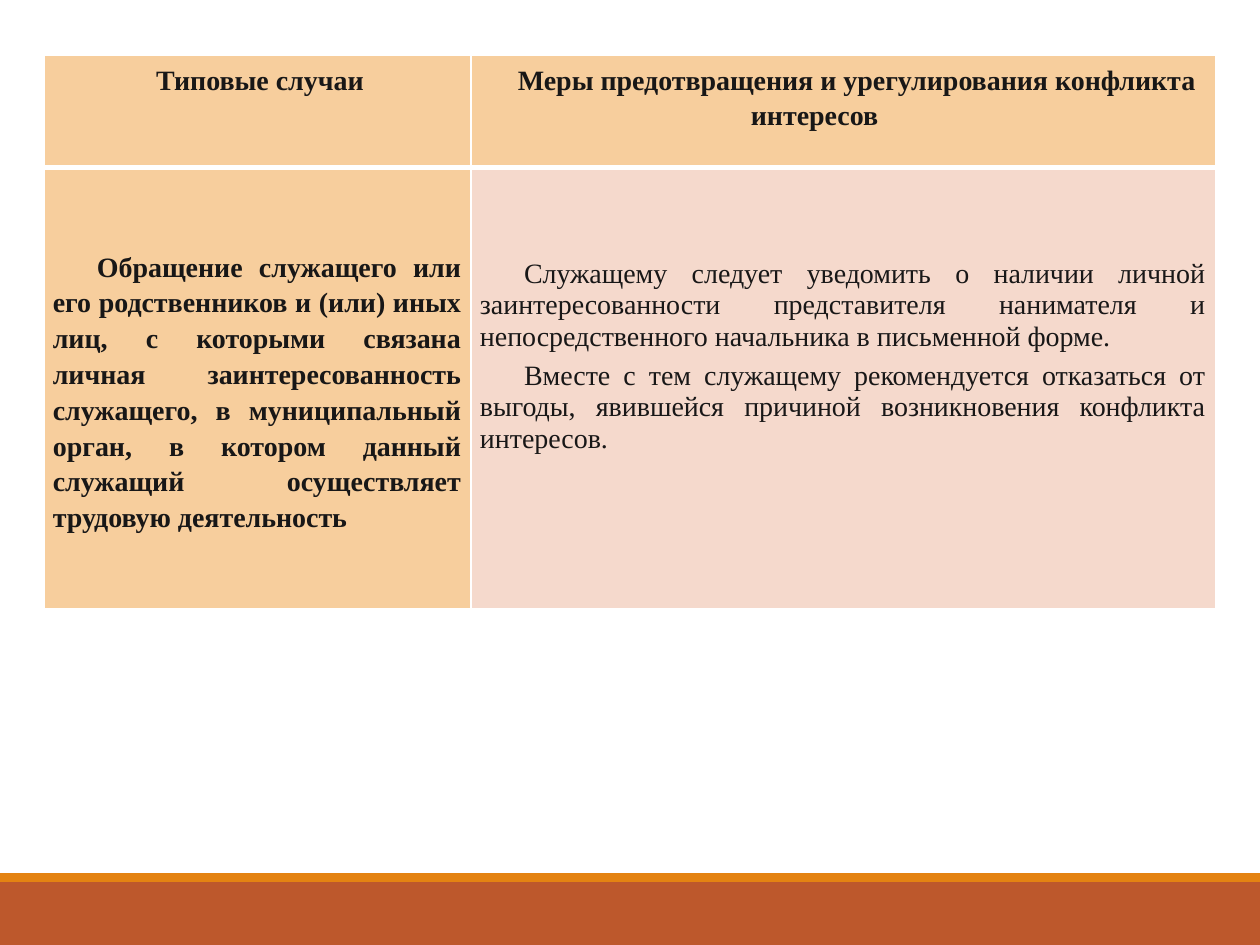
"""Slide with a table of typical conflict-of-interest cases and measures."""
from lxml.etree import SubElement
from pptx import Presentation
from pptx.dml.color import RGBColor
from pptx.enum.shapes import MSO_SHAPE as Shape
from pptx.enum.text import MSO_ANCHOR as Anchor, PP_ALIGN as Align
from pptx.oxml.ns import qn
from pptx.util import Inches, Pt

WHITE = RGBColor(0xFF, 0xFF, 0xFF)
INK = RGBColor(0x18, 0x17, 0x17)
SAND = RGBColor(0xF7, 0xCE, 0x9D)
ROSE = RGBColor(0xF5, 0xD9, 0xCC)
RUST = RGBColor(0xBD, 0x58, 0x2C)
ORANGE = RGBColor(0xE4, 0x83, 0x12)


def set_borders(cell, widths):
    properties = cell._tc.get_or_add_tcPr()
    for position, (side, width) in enumerate(zip("LRTB", widths)):
        border = SubElement(properties, qn(f"a:ln{side}"), w=str(Pt(width)))
        fill = SubElement(border, qn("a:solidFill"))
        SubElement(fill, qn("a:srgbClr"), val=str(WHITE))
        properties.insert(position, border)


deck = Presentation()
deck.slide_width, deck.slide_height = Inches(10), Inches(7.5)
slide = deck.slides.add_slide(deck.slide_layouts[6])

for top, height, color in [(7, 0.5, RUST), (6.93, 0.07, ORANGE)]:
    band = slide.shapes.add_shape(
        Shape.RECTANGLE, 0, Inches(top), deck.slide_width, Inches(height))
    band.shadow.inherit = False
    band.fill.solid()
    band.fill.fore_color.rgb = color
    band.line.fill.background()

measures = slide.shapes.add_table(
    2, 2, Inches(0.35), Inches(0.44), Inches(9.3), Inches(4.39)).table
for column, width in zip(measures.columns, (3.39, 5.91)):
    column.width = Inches(width)
for row, height in zip(measures.rows, (0.89, 3.5)):
    row.height = Inches(height)

HEADING = dict(fill=SAND, bold=True, align=Align.CENTER, left=0.04, indent=0.18,
               spacing=1.15, after=0, anchor=Anchor.TOP, inset=0.04,
               borders=(1, 1, 1, 3))
CASE = HEADING | dict(align=Align.JUSTIFY, left=0, indent=0.35,
                      anchor=Anchor.MIDDLE, borders=(1, 1, 3, 1))
MEASURE = CASE | dict(fill=ROSE, bold=False, spacing=1.01, after=4.3,
                      anchor=Anchor.TOP, inset=0.72)

contents = [
    (HEADING, ["Типовые случаи \t"]),
    (HEADING, ["Меры предотвращения и урегулирования конфликта интересов \t"]),
    (CASE, ["Обращение служащего или его родственников и (или) иных лиц, "
            "с которыми связана личная заинтересованность служащего, "
            "в муниципальный орган, в котором данный служащий осуществляет "
            "трудовую деятельность "]),
    (MEASURE, ["Служащему следует уведомить о наличии личной "
               "заинтересованности представителя нанимателя и "
               "непосредственного начальника в письменной форме.",
               "Вместе с тем служащему рекомендуется отказаться от выгоды, "
               "явившейся причиной возникновения конфликта интересов."]),
]

for cell, (style, texts) in zip(measures.iter_cells(), contents):
    cell.fill.solid()
    cell.fill.fore_color.rgb = style["fill"]
    set_borders(cell, style["borders"])
    cell.vertical_anchor = style["anchor"]
    cell.margin_left, cell.margin_right = Inches(0.07), Inches(0.08)
    cell.margin_top, cell.margin_bottom = Inches(style["inset"]), 0
    cell.text = "\n".join(texts)
    for paragraph in cell.text_frame.paragraphs:
        paragraph.alignment = style["align"]
        paragraph.line_spacing = style["spacing"]
        paragraph.space_after = Pt(style["after"])
        paragraph.font.name = "Times New Roman"
        paragraph.font.size = Pt(16)
        paragraph.font.bold = style["bold"]
        paragraph.font.color.rgb = INK
        layout = paragraph._p.get_or_add_pPr()
        layout.set("marL", str(Inches(style["left"])))
        layout.set("indent", str(Inches(style["indent"])))

deck.save("out.pptx")
